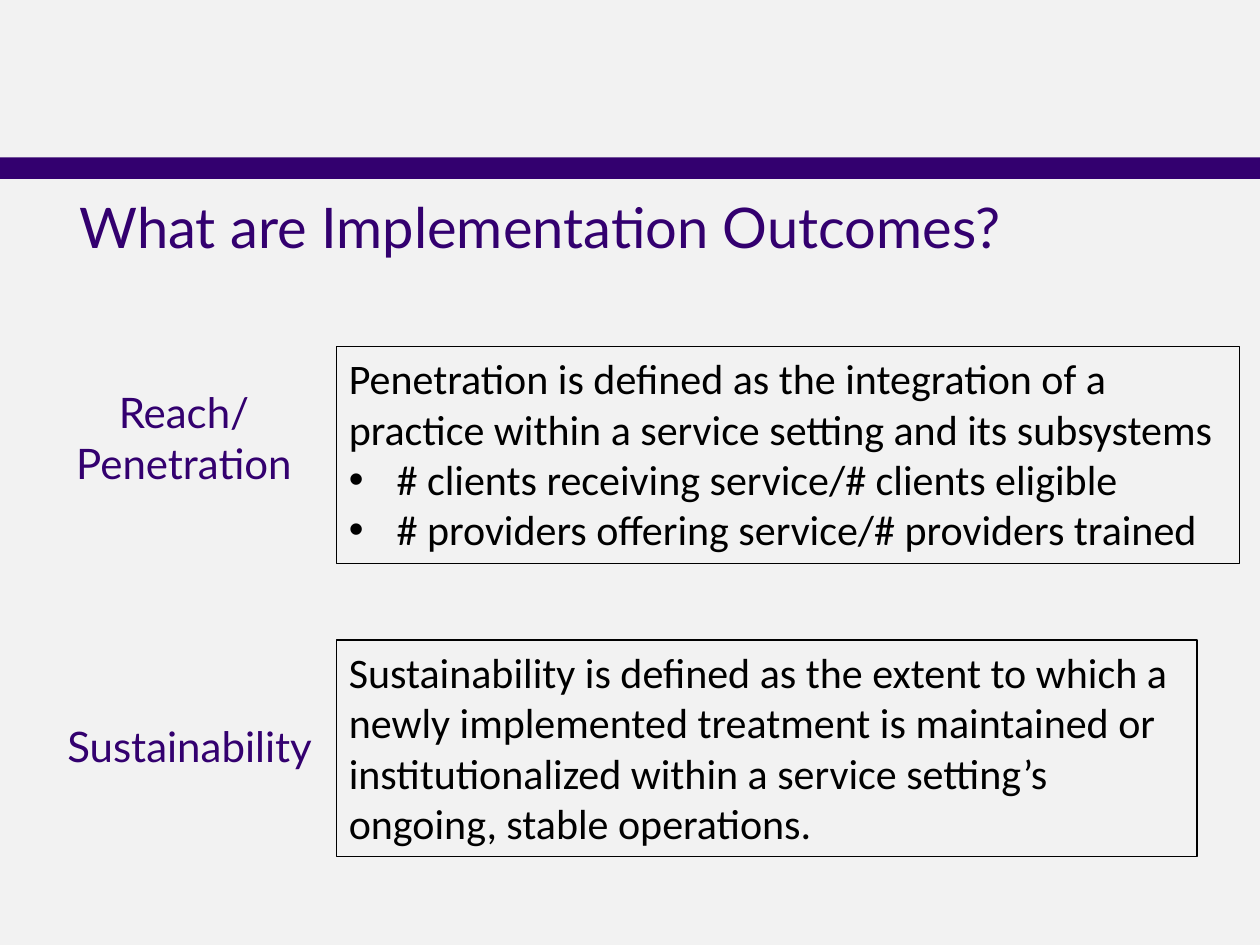
from dataclasses import dataclass

from lxml import etree
from pptx import Presentation
from pptx.dml.color import RGBColor
from pptx.enum import shapes, text
from pptx.oxml.ns import qn
from pptx.util import Inches, Pt

COLORS = {"background": "F2F2F2", "purple": "33006F", "black": "000000"}
HEADING_FONT, BODY_FONT = "Lato", "Calibri"
DEFINITION_LEFT, DEFINITION_HEIGHT = 2.67, 1.72


@dataclass
class Outcome:
    label: list[str]
    label_box: tuple[float, float, float, float]
    definition: str
    measures: list[str]
    top: float
    width: float


OUTCOMES = [
    Outcome(
        ["Sustainability"],
        (0.17, 5.17, 2.67, 1.5),
        "Sustainability is deﬁned as the extent to which a newly implemented "
        "treatment is maintained or institutionalized within a service "
        "setting’s ongoing, stable operations.",
        [],
        5.08,
        6.83,
    ),
    Outcome(
        ["Reach/", "Penetration"],
        (0.25, 3.08, 2.42, 0.78),
        "Penetration is deﬁned as the integration of a practice within a "
        "service setting and its subsystems",
        [
            "# clients receiving service/# clients eligible",
            "# providers offering service/# providers trained",
        ],
        2.75,
        7.17,
    ),
]


def color(name: str) -> RGBColor:
    return RGBColor.from_string(COLORS[name])


def write(frame, lines: list[str], font: str, size: int, color_name: str,
          align, anchor, bullets_from: int | None = None) -> None:
    """Fill a text frame; lines from index bullets_from on get bullets."""
    frame.word_wrap = True
    frame.vertical_anchor = anchor
    frame.text = "\n".join(lines)
    for index, paragraph in enumerate(frame.paragraphs):
        paragraph.alignment = align
        if bullets_from is not None and index >= bullets_from:
            add_bullet(paragraph)
        paragraph.font.name = font
        paragraph.font.size = Pt(size)
        paragraph.font.color.rgb = color(color_name)


def add_bullet(paragraph) -> None:
    properties = paragraph._p.get_or_add_pPr()
    properties.set("marL", str(Inches(0.38)))
    properties.set("indent", str(-Inches(0.38)))
    etree.SubElement(properties, qn("a:buFont")).set("typeface", "Arial")
    etree.SubElement(properties, qn("a:buChar")).set("char", "•")


def add_rectangle(slide, left: float, top: float, width: float, height: float):
    rectangle = slide.shapes.add_shape(
        shapes.MSO_SHAPE.RECTANGLE,
        Inches(left), Inches(top), Inches(width), Inches(height))
    rectangle.shadow.inherit = False
    return rectangle


def add_outcome(slide, outcome: Outcome) -> None:
    label = slide.shapes.add_textbox(*map(Inches, outcome.label_box))
    write(label.text_frame, outcome.label, HEADING_FONT, 24, "purple",
          text.PP_ALIGN.CENTER, text.MSO_ANCHOR.MIDDLE)

    definition = add_rectangle(slide, DEFINITION_LEFT, outcome.top,
                               outcome.width, DEFINITION_HEIGHT)
    definition.fill.background()
    definition.line.color.rgb = color("black")
    definition.line.width = Pt(0.75)
    write(definition.text_frame, [outcome.definition, *outcome.measures],
          BODY_FONT, 24, "black", text.PP_ALIGN.LEFT, text.MSO_ANCHOR.TOP,
          bullets_from=1)
    definition.text_frame.auto_size = text.MSO_AUTO_SIZE.SHAPE_TO_FIT_TEXT


def main() -> None:
    deck = Presentation()
    deck.slide_width, deck.slide_height = Inches(10), Inches(7.5)
    slide = deck.slides.add_slide(deck.slide_layouts[5])
    slide.background.fill.solid()
    slide.background.fill.fore_color.rgb = color("background")

    band = add_rectangle(slide, 0, 1.25, 10, 0.17)
    band.fill.solid()
    band.fill.fore_color.rgb = color("purple")
    band.line.fill.background()

    title = slide.shapes.title
    title.left, title.top = Inches(0.08), Inches(1.42)
    title.width, title.height = Inches(8.42), Inches(0.75)
    write(title.text_frame, ["What are Implementation Outcomes?"],
          HEADING_FONT, 32, "purple",
          text.PP_ALIGN.CENTER, text.MSO_ANCHOR.MIDDLE)

    for outcome in OUTCOMES:
        add_outcome(slide, outcome)

    deck.save("out.pptx")


if __name__ == "__main__":
    main()
